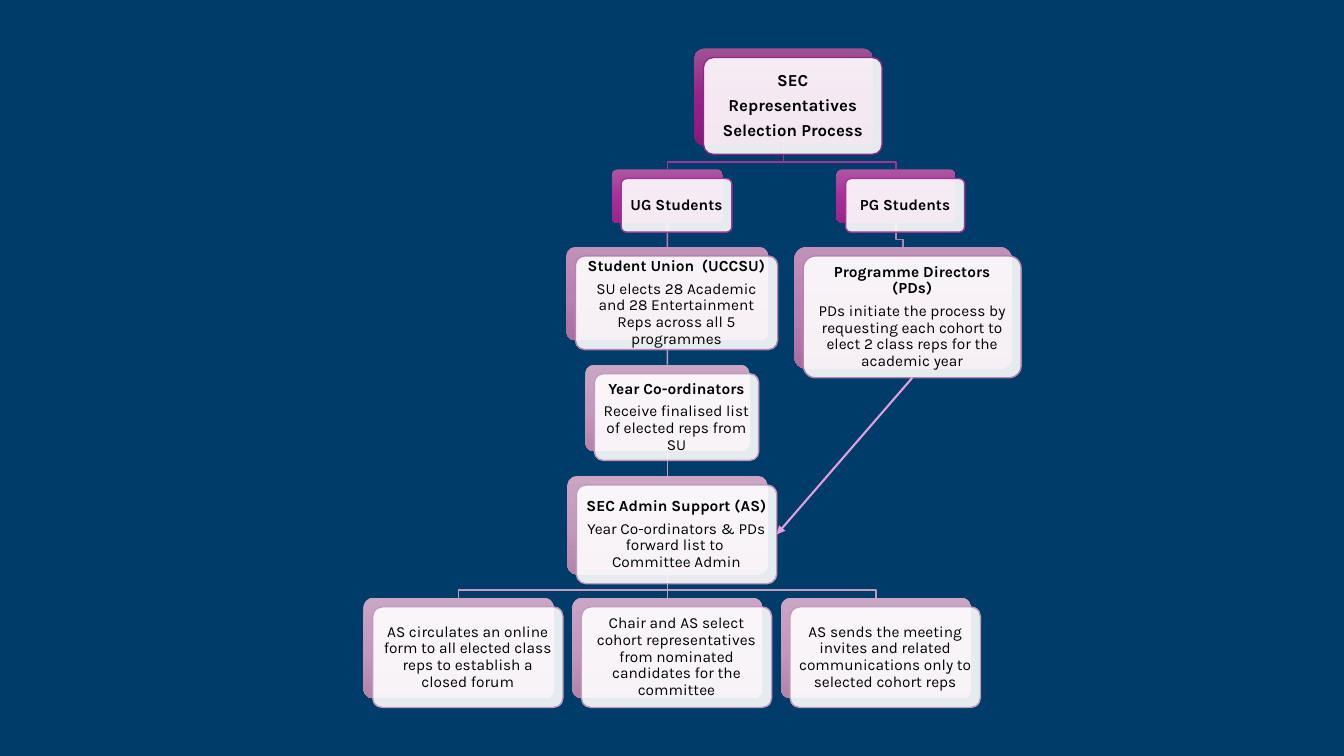
"""Builds the flow chart of the SEC representatives selection process."""
from copy import deepcopy

from lxml import etree
from pptx import Presentation
from pptx.dml.color import RGBColor
from pptx.enum.shapes import MSO_CONNECTOR, MSO_SHAPE
from pptx.enum.text import MSO_ANCHOR, PP_ALIGN
from pptx.oxml.ns import qn
from pptx.util import Cm, Pt

STRAIGHT = MSO_CONNECTOR.STRAIGHT
ROUNDED = MSO_SHAPE.ROUNDED_RECTANGLE
MIDDLE = MSO_ANCHOR.MIDDLE
CENTER = PP_ALIGN.CENTER

FONT = "Karla"
OFFSET = 0.23
BEND = 0.19
LEFT_COLUMN = 16.82
LEAF_PITCH = 5.26
LEAF_SIZE = (15.06, 4.8, 2.54)

LEVELS = {
    "title": (["9F5194", "97228A", "8A197E"], "912785"),
    "group": (["AD57A1", "A72F99", "99258B"], "A13595"),
    "source": (["C091B9", "BB80B2", "A96EA0"], "B882B0"),
    "step": (["CAA5C4", "C598BE", "B284AA"], "C39ABC"),
}

# name: level, centre x, top, width, height, bold lines, plain text
CARDS = {
    "sec": ("title", 19.75, 1.22, 4.5, 2.44,
            ["SEC", "Representatives", "Selection Process"], ""),
    "ug": ("group", LEFT_COLUMN, 4.27, 2.79, 1.35, ["UG Students"], ""),
    "union": ("source", LEFT_COLUMN, 6.22, 5.1, 2.36, ["Student Union  (UCCSU)"],
              "SU elects 28 Academic and 28 Entertainment Reps across all 5 programmes"),
    "year": ("step", LEFT_COLUMN, 9.19, 4.14, 2.18, ["Year Co-ordinators"],
             "Receive finalised list of elected reps from SU"),
    "admin": ("step", LEFT_COLUMN, 11.99, 5.05, 2.49, ["SEC Admin Support (AS)"],
              "Year Co-ordinators & PDs forward list to  Committee Admin"),
    "forum": ("step", LEFT_COLUMN - LEAF_PITCH, *LEAF_SIZE, [],
              "AS circulates an online form to all elected class reps to establish a closed forum"),
    "select": ("step", LEFT_COLUMN, *LEAF_SIZE, [],
               "Chair and AS select cohort representatives from nominated candidates for the committee"),
    "invite": ("step", LEFT_COLUMN + LEAF_PITCH, *LEAF_SIZE, [],
               "AS sends the meeting invites and related communications only to selected cohort reps"),
    "pg": ("group", 22.58, 4.27, 3.0, 1.35, ["PG Students"], ""),
    "directors": ("source", 22.76, 6.22, 5.49, 3.07, ["Programme Directors (PDs)"],
                  "PDs initiate the process by requesting each cohort to elect 2 class reps "
                  "for the academic year"),
}

LINKS = [
    ("sec", "ug"), ("sec", "pg"), ("ug", "union"), ("pg", "directors"),
    ("union", "year"), ("year", "admin"),
    ("admin", "forum"), ("admin", "select"), ("admin", "invite"),
]


def rgb(value):
    return RGBColor.from_string(value)


def add_line(begin, begin_site, end, end_site, color, width):
    line = slide.shapes.add_connector(STRAIGHT, 0, 0, 0, 0)
    line.begin_connect(begin, begin_site)
    line.end_connect(end, end_site)
    line.line.color.rgb = rgb(color)
    line.line.width = Pt(width)
    etree.SubElement(line._element.spPr, qn("a:effectLst"))
    return line


prs = Presentation()
prs.slide_width, prs.slide_height = Cm(33.87), Cm(19.05)
slide = prs.slides.add_slide(prs.slide_layouts[6])
slide.background.fill.solid()
slide.background.fill.fore_color.rgb = rgb("003C69")

backs = {}
for name, (level, center, top, width, height, heads, body) in CARDS.items():
    s = slide.shapes.add_shape(ROUNDED, Cm(center - width / 2), Cm(top), Cm(width), Cm(height))
    s.adjustments[0] = 0.1
    s.shadow.inherit = False
    s.line.fill.background()
    s.fill.gradient()
    s.fill.gradient_angle = 270
    stops = s._element.spPr.find(qn("a:gradFill")).find(qn("a:gsLst"))
    stops.insert(1, deepcopy(stops[0]))
    for stop, position, color in zip(s.fill.gradient_stops, (0, 0.5, 1), LEVELS[level][0]):
        stop.color.rgb = rgb(color)
        stop.position = position
    backs[name] = s

for parent, child in LINKS:
    x1, x2 = CARDS[parent][1], CARDS[child][1]
    y1, y2 = CARDS[parent][2] + CARDS[parent][4], CARDS[child][2]
    color = LEVELS[CARDS[child][0]][1]
    if x1 == x2:
        add_line(backs[parent], 2, backs[child], 0, color, 1)
    else:
        builder = slide.shapes.build_freeform(Cm(x1), Cm(y1))
        corners = [(x1, y2 - BEND), (x2, y2 - BEND), (x2, y2)]
        builder.add_line_segments([(Cm(x), Cm(y)) for x, y in corners], close=False)
        s = builder.convert_to_shape()
        s.shadow.inherit = False
        s.fill.background()
        s.line.color.rgb = rgb(color)
        s.line.width = Pt(1)

fronts = {}
for name, (level, center, top, width, height, heads, body) in CARDS.items():
    s = slide.shapes.add_shape(ROUNDED, Cm(center - width / 2 + OFFSET), Cm(top + OFFSET),
                               Cm(width), Cm(height))
    s.adjustments[0] = 0.1
    s.shadow.inherit = False
    s.fill.solid()
    s.fill.fore_color.rgb = rgb("FFFFFF")
    white = s._element.spPr.find(qn("a:solidFill"))[0]
    etree.SubElement(white, qn("a:alpha")).set("val", "90000")
    s.line.color.rgb = rgb(LEVELS[level][1])
    s.line.width = Pt(1)
    tf = s.text_frame
    tf.word_wrap = True
    tf.vertical_anchor = MIDDLE
    tf.margin_left = tf.margin_right = tf.margin_top = tf.margin_bottom = Cm(0.13)
    tf.text = "\n".join(heads + ([body] if body else []))
    size = 12 if level == "title" else 11
    for i, p in enumerate(tf.paragraphs):
        p.alignment = CENTER
        p.line_spacing = 0.9
        p.space_after = Pt(0.4 * size)
        p.font.name = FONT
        p.font.size = Pt(size)
        r = p.runs[0]
        r.font.name = FONT
        r.font.size = Pt(size)
        r.font.bold = i < len(heads)
        r.font.color.rgb = rgb("000000")
    fronts[name] = s

arrow = add_line(fronts["directors"], 2, fronts["admin"], 3, "E59EDD", 1.5)
etree.SubElement(arrow.line._get_or_add_ln(), qn("a:tailEnd")).set("type", "triangle")

prs.save("out.pptx")
